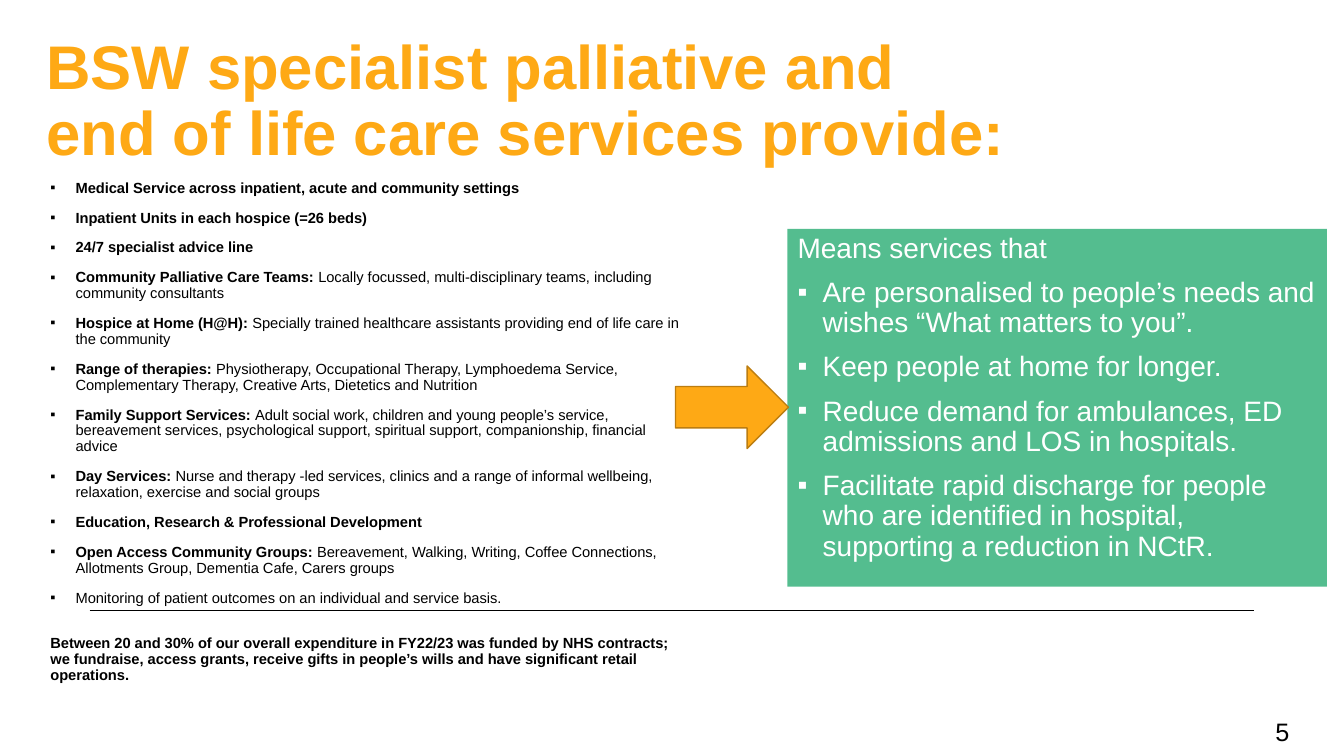
import pptx
import pptx.util
import pptx.dml.color
import pptx.enum.shapes
import pptx.enum.text
from lxml import etree
from pptx.oxml.ns import qn

TITLE = ["BSW specialist palliative and ", "end of life care services provide:"]
# (bold lead, regular text)
SERVICES = [
    ("Medical Service across inpatient, acute and community settings", ""),
    ("Inpatient Units in each hospice (=26 beds)", ""),
    ("24/7 specialist advice line", ""),
    ("Community Palliative Care Teams: ",
     "Locally focussed, multi-disciplinary teams, including community consultants"),
    ("Hospice at Home (H@H): ",
     "Specially trained healthcare assistants providing end of life care in the community"),
    ("Range of therapies: ",
     "Physiotherapy, Occupational Therapy, Lymphoedema Service, Complementary Therapy, "
     "Creative Arts, Dietetics and Nutrition"),
    ("Family Support Services: ",
     "Adult social work, children and young people’s service, bereavement services, "
     "psychological support, spiritual support, companionship, financial advice"),
    ("Day Services: ",
     "Nurse and therapy -led services, clinics and a range of informal wellbeing, "
     "relaxation, exercise and social groups"),
    ("Education, Research & Professional Development", ""),
    ("Open Access Community Groups: ",
     "Bereavement, Walking, Writing, Coffee Connections, Allotments Group, "
     "Dementia Cafe, Carers groups"),
    ("", "Monitoring of patient outcomes on an individual and service basis."),
]
FUNDING = ("Between 20 and 30% of our overall expenditure in FY22/23 was funded by NHS contracts; "
           "we fundraise, access grants, receive gifts in people’s wills and have significant "
           "retail operations.")
MEANS = "Means services that"
OUTCOMES = [
    "Are personalised to people’s needs and wishes “What matters to you”.",
    "Keep people at home for longer.",
    "Reduce demand for ambulances, ED admissions and LOS in hospitals.",
    "Facilitate rapid discharge for people who are identified in hospital, "
    "supporting a reduction in NCtR.",
]
PAGE = "5"

COLORS = {"orange": "FEA915", "brown": "BC7D10", "green": "54BD8F",
          "black": "000000", "white": "FFFFFF"}
FONT = "Arial"
COLS, ROWS = 13.33, 7.5  # one-inch grid
# left, top, width, height in grid cells
BOXES = {"title": (0.36, 0.29, 11.5, 1.45), "services": (0.4, 1.74, 6.52, 4.79),
         "outcomes": (7.81, 2.27, 5.35, 3.55), "page": (12.55, 7.06, 0.79, 0.17),
         "arrow": (6.7, 3.63, 1.12, 0.82)}
RULE_Y, RULE_MARGIN = 6.06, 0.89
INDENT = 0.25
GAP = 10


def box(name):
    return [pptx.util.Inches(v) for v in BOXES[name]]


def rgb(name):
    return pptx.dml.color.RGBColor.from_string(COLORS[name])


def add_run(p, text, size, color="black", bold=False):
    r = p.add_run()
    r.text = text
    r.font.name, r.font.size, r.font.bold = FONT, pptx.util.Pt(size), bold
    r.font.color.rgb = rgb(color)


def add_paragraph(tf, parts, size, color="black", bullet=False, before=GAP):
    """Fill the empty first paragraph or add one; parts are (text, bold) pairs."""
    first = not tf.paragraphs[0].runs
    p = tf.paragraphs[0] if first else tf.add_paragraph()
    pPr = p._p.get_or_add_pPr()
    indent = pptx.util.Inches(INDENT) if bullet else 0
    pPr.set("marL", str(indent))
    pPr.set("indent", str(-indent))
    if bullet:
        etree.SubElement(pPr, qn("a:buChar")).set("char", "▪")
    else:
        etree.SubElement(pPr, qn("a:buNone"))
    p.alignment = pptx.enum.text.PP_ALIGN.LEFT
    p.line_spacing = 0.9
    p.space_before = pptx.util.Pt(0 if first else before)
    for text, bold in parts:
        if text:
            add_run(p, text, size, color, bold)
    return p


def set_up(shape, name, anchor=pptx.enum.text.MSO_ANCHOR.TOP):
    """Place a text shape and return its text frame."""
    shape.left, shape.top, shape.width, shape.height = box(name)
    tf = shape.text_frame
    tf.word_wrap = True
    tf.auto_size = pptx.enum.text.MSO_AUTO_SIZE.NONE
    tf.vertical_anchor = anchor
    return tf


def main():
    prs = pptx.Presentation()
    prs.slide_width, prs.slide_height = pptx.util.Inches(COLS), pptx.util.Inches(ROWS)
    s = prs.slides.add_slide(prs.slide_layouts[3])
    title, services, outcomes = s.placeholders

    tf = set_up(title, "title", pptx.enum.text.MSO_ANCHOR.MIDDLE)
    p = add_paragraph(tf, [(TITLE[0], True)], 44, "orange")
    p.add_line_break()
    add_run(p, TITLE[1], 44, "orange", True)

    tf = set_up(services, "services")
    for lead, detail in SERVICES:
        add_paragraph(tf, [(lead, True), (detail, False)], 10.5, bullet=True)
    add_paragraph(tf, [(FUNDING, True)], 10.5, before=2 * GAP + 1)

    outcomes.fill.solid()
    outcomes.fill.fore_color.rgb = rgb("green")
    tf = set_up(outcomes, "outcomes")
    add_paragraph(tf, [(MEANS, False)], 20, "white")
    for text in OUTCOMES:
        add_paragraph(tf, [(text, False)], 20, "white", bullet=True)

    tf = set_up(s.shapes.add_textbox(*box("page")), "page")
    add_run(tf.paragraphs[0], PAGE, 18)

    rule = s.shapes.add_connector(
        pptx.enum.shapes.MSO_CONNECTOR.STRAIGHT,
        pptx.util.Inches(RULE_MARGIN), pptx.util.Inches(RULE_Y),
        pptx.util.Inches(COLS - RULE_MARGIN), pptx.util.Inches(RULE_Y))
    rule.line.color.rgb = rgb("black")
    rule.line.width = pptx.util.Pt(0.5)
    etree.SubElement(rule._element.spPr, qn("a:effectLst"))

    arrow = s.shapes.add_shape(pptx.enum.shapes.MSO_SHAPE.RIGHT_ARROW, *box("arrow"))
    arrow.shadow.inherit = False
    arrow.fill.solid()
    arrow.fill.fore_color.rgb = rgb("orange")
    arrow.line.color.rgb = rgb("brown")
    arrow.line.width = pptx.util.Pt(1)

    prs.save("out.pptx")


if __name__ == "__main__":
    main()
